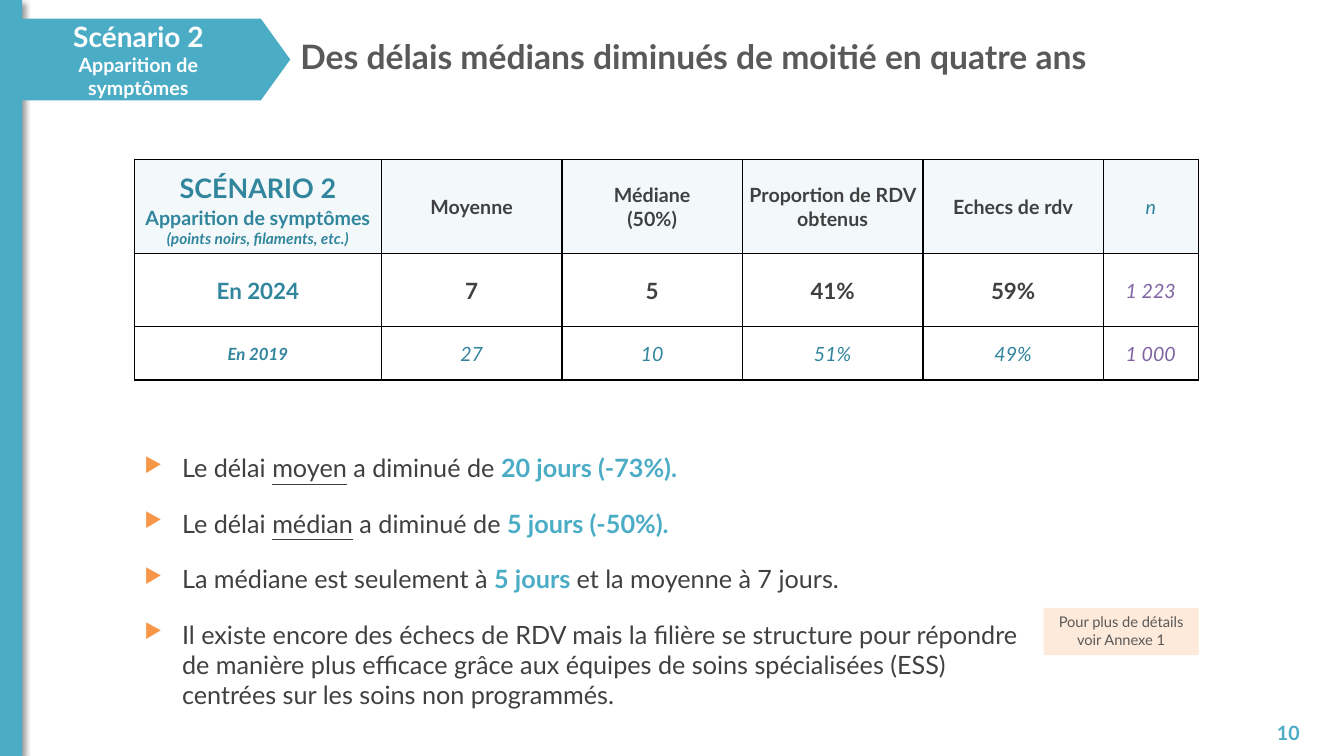
from dataclasses import dataclass

from lxml.etree import SubElement
from pptx import Presentation
from pptx.dml.color import RGBColor
from pptx.enum.shapes import MSO_SHAPE
from pptx.enum.text import MSO_ANCHOR, MSO_AUTO_SIZE, PP_ALIGN
from pptx.oxml.ns import qn
from pptx.util import Inches, Pt

TEAL = RGBColor(0x4B, 0xAC, 0xC6)
DARK_TEAL = RGBColor(0x31, 0x85, 0x9C)
PALE_TEAL = RGBColor(0xF3, 0xF9, 0xFB)
ORANGE = RGBColor(0xF7, 0x96, 0x46)
PEACH = RGBColor(0xFD, 0xEA, 0xDA)
PURPLE = RGBColor(0x80, 0x64, 0xA2)
GREY = RGBColor(0x59, 0x59, 0x59)
INK = RGBColor(0x40, 0x40, 0x40)
WHITE = RGBColor(0xFF, 0xFF, 0xFF)
BLACK = RGBColor(0, 0, 0)

WIDTH = Inches(13.33)
HEIGHT = Inches(7.5)
FONT = "Lato"


@dataclass(frozen=True)
class Area:
    left: float
    top: float
    width: float
    height: float

    def lengths(self) -> tuple:
        return across(self.left), down(self.top), across(self.width), down(self.height)


@dataclass(frozen=True)
class Span:
    text: str
    underline: bool = False
    strong: bool = False


@dataclass(frozen=True)
class Line:
    text: str | tuple[Span, ...]
    size: float
    color: RGBColor
    bold: bool = False
    italic: bool = False
    small_caps: bool = False


def across(percent: float) -> int:
    return round(WIDTH * percent / 100)


def down(percent: float) -> int:
    return round(HEIGHT * percent / 100)


def write(frame, lines: list[Line], align=PP_ALIGN.LEFT) -> None:
    for index, line in enumerate(lines):
        para = frame.paragraphs[0] if index == 0 else frame.add_paragraph()
        para.alignment = align
        font = para.font
        font.name, font.size = FONT, Pt(line.size)
        font.bold, font.italic = line.bold, line.italic
        font.color.rgb = line.color
        spans = (Span(line.text),) if isinstance(line.text, str) else line.text
        for span in spans:
            run = para.add_run()
            run.text = span.text
            if span.underline:
                run.font.underline = True
            if span.strong:
                run.font.bold = True
                run.font.color.rgb = TEAL
            if line.small_caps:
                run.font._element.set("cap", "small")


def add_text(page, area: Area, lines: list[Line], align=PP_ALIGN.LEFT, anchor=MSO_ANCHOR.TOP):
    frame = page.shapes.add_textbox(*area.lengths()).text_frame
    frame.word_wrap = True
    frame.vertical_anchor = anchor
    write(frame, lines, align)
    return frame


def add_block(page, kind, area: Area, color: RGBColor):
    block = page.shapes.add_shape(kind, *area.lengths())
    block.shadow.inherit = False
    block.fill.solid()
    block.fill.fore_color.rgb = color
    block.line.fill.background()
    return block


def add_side_bar(page) -> None:
    bar = add_block(page, MSO_SHAPE.RECTANGLE, Area(0, 0, 1.65, 100), TEAL)
    effects = bar._element.spPr.find(qn("a:effectLst"))
    shadow = SubElement(effects, qn("a:outerShdw"), blurRad=str(Pt(4)), dist=str(Pt(3)),
                        dir=str(45 * 60000), rotWithShape="0")
    color = SubElement(shadow, qn("a:srgbClr"), val=str(BLACK))
    SubElement(color, qn("a:alpha"), val="40000")


def add_banner(page) -> None:
    banner = add_block(page, MSO_SHAPE.PENTAGON, Area(1.35, 2.47, 20.25, 10.8), TEAL)
    banner.adjustments[0] = 0.36
    frame = banner.text_frame
    frame.word_wrap = True
    frame.vertical_anchor = MSO_ANCHOR.MIDDLE
    frame.margin_left, frame.margin_right = across(2.25), across(3.5)
    frame.margin_top = frame.margin_bottom = 0
    write(frame, [Line("Scénario 2", 20, WHITE, bold=True),
                  Line("Apparition de symptômes", 14, WHITE, bold=True)], PP_ALIGN.CENTER)


def add_note(page) -> None:
    note = add_block(page, MSO_SHAPE.RECTANGLE, Area(77.64, 80.4, 11.55, 6.27), PEACH)
    frame = note.text_frame
    frame.word_wrap = True
    frame.auto_size = MSO_AUTO_SIZE.SHAPE_TO_FIT_TEXT
    frame.vertical_anchor = MSO_ANCHOR.TOP
    write(frame, [Line("Pour plus de détails voir Annexe 1", 10.5, GREY)], PP_ALIGN.CENTER)


def add_findings(page) -> None:
    findings = [
        (Span("Le délai "), Span("moyen", underline=True), Span(" a diminué de "),
         Span("20 jours (-73%).", strong=True)),
        (Span("Le délai "), Span("médian", underline=True), Span(" a diminué de "),
         Span("5 jours (-50%).", strong=True)),
        (Span("La médiane est seulement à "), Span("5 jours ", strong=True),
         Span("et la moyenne à 7 jours.")),
        (Span("Il existe encore des échecs de RDV mais la filière se structure pour répondre "
              "de manière plus efficace grâce aux équipes de soins spécialisées (ESS) "
              "centrées sur les soins non programmés."),),
    ]
    frame = add_text(page, Area(10, 59.2, 68.57, 29.2),
                     [Line(spans, 18, INK) for spans in findings])
    indent = across(2.81)
    for para in frame.paragraphs:
        para.space_before, para.space_after = Pt(6), Pt(12)
        properties = para._p.get_or_add_pPr()
        properties.set("marL", str(indent))
        properties.set("indent", str(-indent))
        color = properties.makeelement(qn("a:buClr"))
        SubElement(color, qn("a:srgbClr"), val=str(ORANGE))
        size = properties.makeelement(qn("a:buSzPct"), val="80000")
        mark = properties.makeelement(qn("a:buChar"), char="▶")
        for element in (color, size, mark):
            properties.find(qn("a:defRPr")).addprevious(element)


def add_borders(cell) -> None:
    properties = cell._tc.get_or_add_tcPr()
    for side in ("lnL", "lnR", "lnT", "lnB"):
        border = SubElement(properties, qn(f"a:{side}"), w=str(Pt(1)))
        fill = SubElement(border, qn("a:solidFill"))
        SubElement(fill, qn("a:srgbClr"), val=str(BLACK))


def add_delays(page) -> None:
    columns = [18.38] + [13.43] * 4 + [7.05]
    rows = [12.5, 9.6, 7.1]
    heads = [["Moyenne"], ["Médiane", "(50%)"], ["Proportion de RDV obtenus"], ["Echecs de rdv"]]
    corner = [Line("scénario 2", 24, DARK_TEAL, bold=True, small_caps=True),
              Line("Apparition de symptômes", 14, DARK_TEAL, bold=True),
              Line("(points noirs, filaments, etc.)", 11, DARK_TEAL, bold=True, italic=True)]
    contents = [
        [corner]
        + [[Line(text, 14, INK, bold=True) for text in head] for head in heads]
        + [[Line("n", 14, DARK_TEAL, italic=True)]],
        [[Line("En 2024", 16, DARK_TEAL, bold=True)]]
        + [[Line(text, 16, INK, bold=True)] for text in ("7", "5", "41%", "59%")]
        + [[Line("1 223", 14, PURPLE, italic=True)]],
        [[Line("En 2019", 12, DARK_TEAL, bold=True, italic=True)]]
        + [[Line(text, 14, DARK_TEAL, italic=True)] for text in ("27", "10", "51%", "49%")]
        + [[Line("1 000", 14, PURPLE, italic=True)]],
    ]
    area = Area(10, 21.07, sum(columns), sum(rows))
    table = page.shapes.add_table(len(rows), len(columns), *area.lengths()).table
    table.first_row = table.horz_banding = False
    for column, share in zip(table.columns, columns):
        column.width = across(share)
    for index, (row, share) in enumerate(zip(table.rows, rows)):
        row.height = down(share)
        for cell, lines in zip(row.cells, contents[index]):
            add_borders(cell)
            cell.fill.solid()
            cell.fill.fore_color.rgb = PALE_TEAL if index == 0 else WHITE
            cell.vertical_anchor = MSO_ANCHOR.MIDDLE
            cell.margin_left = cell.margin_right = cell.margin_top = Inches(0.01)
            cell.margin_bottom = 0
            write(cell.text_frame, lines, PP_ALIGN.CENTER)


def main() -> None:
    deck = Presentation()
    deck.slide_width, deck.slide_height = WIDTH, HEIGHT
    page = deck.slides.add_slide(deck.slide_layouts[6])
    add_side_bar(page)
    add_text(page, Area(21.61, 4.13, 74.72, 7.6),
             [Line("Des délais médians diminués de moitié en quatre ans", 24, GREY, bold=True)])
    add_findings(page)
    add_note(page)
    add_text(page, Area(91.82, 94.27, 5.63, 5.33), [Line("10", 14, TEAL, bold=True)],
             PP_ALIGN.RIGHT, MSO_ANCHOR.MIDDLE)
    add_delays(page)
    add_banner(page)
    deck.save("out.pptx")


if __name__ == "__main__":
    main()
